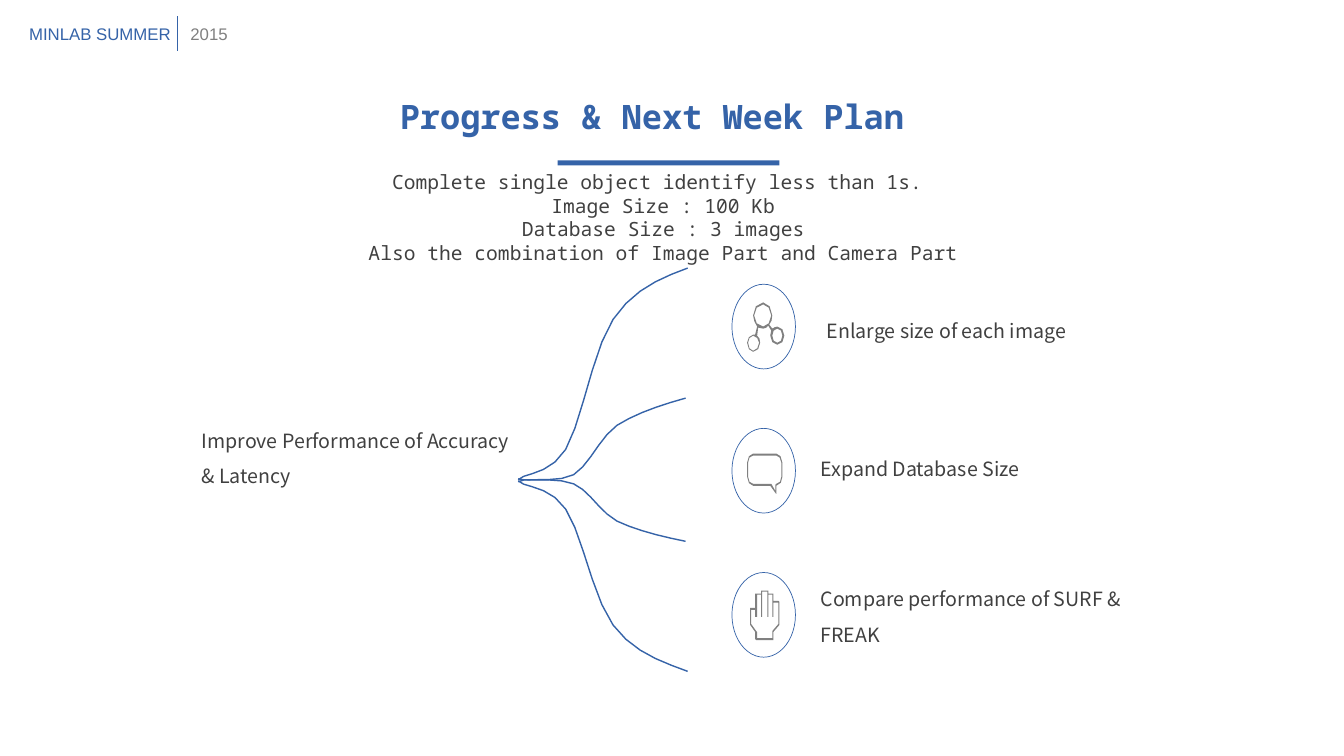
from dataclasses import dataclass

from lxml import etree
from pptx import Presentation
from pptx import util as u
from pptx.dml.color import RGBColor
from pptx.enum import shapes, text
from pptx.oxml.ns import qn


@dataclass(frozen=True)
class Theme:
    blue: str = "3563A8"
    dark: str = "404040"
    gray: str = "808080"
    mono: str = "Noto Sans Mono"
    sans: str = "Noto Sans CJK SC"
    plain: str = "Arial"
    title: int = 24
    body: int = 14
    small: int = 12


THEME = Theme()
CENTER = text.PP_ALIGN.CENTER
LEFT = text.PP_ALIGN.LEFT

TITLE = "Progress & Next Week Plan"
PROGRESS = [
    "Complete single object identify less than 1s. ",
    "Image Size : 100 Kb",
    "Database Size : 3 images",
    "Also the combination of Image Part and Camera Part",
]
PLANS = [
    ("Improve Performance of Accuracy & Latency", (1.9, 4.09, 3.38, 0.81)),
    ("Enlarge size of each image", (8.1, 3, 3.38, 0.45)),
    ("Expand Database Size", (8.04, 4.37, 3.38, 0.45)),
    ("Compare performance of SURF & FREAK", (8.04, 5.66, 3.38, 0.81)),
]
HEADER = [
    ("MINLAB SUMMER", (0.19, 0.19, 1.64, 0.3), THEME.blue),
    ("2015", (1.79, 0.19, 0.57, 0.3), THEME.gray),
]

BRANCHES = [
    [(6.82, 2.66), (6.55, 2.76, 6.28, 2.87, 6.08, 3.17),
     (5.88, 3.47, 5.77, 4.19, 5.61, 4.46), (5.45, 4.72, 5.19, 4.69, 5.14, 4.76)],
    [(6.82, 6.66), (6.55, 6.56, 6.28, 6.47, 6.08, 6.2),
     (5.88, 5.93, 5.77, 5.28, 5.61, 5.05), (5.45, 4.81, 5.19, 4.84, 5.14, 4.77)],
    [(6.8, 3.95), (6.55, 4.02, 6.31, 4.1, 6.12, 4.22),
     (5.94, 4.35, 5.85, 4.61, 5.69, 4.71), (5.52, 4.8, 5.18, 4.73, 5.14, 4.78)],
    [(6.8, 5.37), (6.55, 5.32, 6.31, 5.26, 6.12, 5.17),
     (5.94, 5.07, 5.85, 4.87, 5.69, 4.8), (5.52, 4.73, 5.18, 4.78, 5.14, 4.75)],
]

MOLECULE = [
    [(7.71, 3.24), (7.69, 3.24, 7.68, 3.25, 7.66, 3.26), (7.63, 3.22),
     (7.65, 3.2, 7.66, 3.17, 7.66, 3.13), (7.66, 3.06, 7.62, 3, 7.57, 3),
     (7.51, 3, 7.47, 3.06, 7.47, 3.13), (7.47, 3.17, 7.49, 3.21, 7.51, 3.24),
     (7.49, 3.32), (7.47, 3.32), (7.44, 3.32, 7.41, 3.36, 7.41, 3.4),
     (7.41, 3.45, 7.44, 3.49, 7.47, 3.49), (7.51, 3.49, 7.54, 3.45, 7.54, 3.4),
     (7.54, 3.37, 7.53, 3.34, 7.51, 3.33), (7.52, 3.25),
     (7.54, 3.25, 7.55, 3.26, 7.57, 3.26), (7.59, 3.26, 7.61, 3.25, 7.62, 3.23),
     (7.65, 3.28), (7.65, 3.29, 7.64, 3.31, 7.64, 3.33),
     (7.64, 3.38, 7.67, 3.42, 7.71, 3.42), (7.75, 3.42, 7.78, 3.38, 7.78, 3.33),
     (7.78, 3.28, 7.75, 3.24, 7.71, 3.24)],
    [(7.53, 3.4), (7.53, 3.44, 7.5, 3.48, 7.47, 3.48), (7.44, 3.48, 7.42, 3.44, 7.42, 3.4),
     (7.42, 3.37, 7.44, 3.33, 7.47, 3.33), (7.5, 3.33, 7.53, 3.37, 7.53, 3.4)],
    [(7.48, 3.13), (7.48, 3.07, 7.52, 3.02, 7.57, 3.02), (7.61, 3.02, 7.65, 3.07, 7.65, 3.13),
     (7.65, 3.19, 7.61, 3.24, 7.57, 3.24), (7.52, 3.24, 7.48, 3.19, 7.48, 3.13)],
    [(7.71, 3.4), (7.68, 3.4, 7.66, 3.37, 7.66, 3.33), (7.66, 3.29, 7.68, 3.26, 7.71, 3.26),
     (7.74, 3.26, 7.76, 3.29, 7.76, 3.33), (7.76, 3.37, 7.74, 3.4, 7.71, 3.4)],
]
SPEECH = [
    [(7.7, 4.9), (7.69, 4.89), (7.64, 4.82), (7.47, 4.82),
     (7.44, 4.82, 7.41, 4.78, 7.41, 4.73), (7.41, 4.59), (7.41, 4.54, 7.44, 4.5, 7.47, 4.5),
     (7.7, 4.5), (7.73, 4.5, 7.76, 4.54, 7.76, 4.59), (7.76, 4.73),
     (7.76, 4.78, 7.74, 4.81, 7.7, 4.82), (7.7, 4.89)],
    [(7.47, 4.52), (7.44, 4.52, 7.42, 4.55, 7.42, 4.59), (7.42, 4.73),
     (7.42, 4.77, 7.44, 4.8, 7.47, 4.8), (7.64, 4.8), (7.65, 4.8), (7.69, 4.87),
     (7.69, 4.81), (7.7, 4.8), (7.73, 4.8, 7.75, 4.77, 7.75, 4.73), (7.75, 4.59),
     (7.75, 4.55, 7.72, 4.52, 7.7, 4.52)],
]
HAND = [
    [(7.72, 5.96), (7.67, 5.96), (7.67, 5.89), (7.62, 5.89), (7.62, 5.86), (7.55, 5.86),
     (7.55, 5.89), (7.49, 5.89), (7.49, 6.03), (7.44, 6.03), (7.44, 6.2), (7.49, 6.27),
     (7.49, 6.34), (7.5, 6.35), (7.67, 6.35), (7.67, 6.27), (7.73, 6.2), (7.73, 5.97)],
    [(7.72, 6.19), (7.66, 6.26), (7.66, 6.33), (7.51, 6.33), (7.51, 6.27), (7.5, 6.26),
     (7.45, 6.19), (7.45, 6.05), (7.49, 6.05), (7.49, 6.12), (7.51, 6.12), (7.51, 5.9),
     (7.55, 5.9), (7.55, 6.12), (7.56, 6.12), (7.56, 5.87), (7.61, 5.87), (7.61, 6.12),
     (7.62, 6.12), (7.62, 5.9), (7.66, 5.9), (7.66, 6.12), (7.67, 6.12), (7.67, 5.98),
     (7.72, 5.98)],
]
ICONS = [MOLECULE, SPEECH, HAND]
RING_TOP, RING_PITCH = 2.82, 1.43
ICON_PARTS, BRANCH_PARTS = 2, 5


def inches(values):
    return [u.Inches(value) for value in values]


def assign(target, values):
    for name, value in values.items():
        setattr(target, name, value)


def write(box, lines, font, size, color, bold=False, align=LEFT, spacing=None, wrap=True):
    frame = box.text_frame
    assign(frame, {"word_wrap": wrap, "auto_size": text.MSO_AUTO_SIZE.NONE,
                   "vertical_anchor": text.MSO_ANCHOR.TOP})
    for index, line in enumerate(lines):
        para = frame.add_paragraph() if index else frame.paragraphs[0]
        assign(para, {"alignment": align, "line_spacing": spacing})
        span = para.add_run()
        span.text = line
        assign(span.font, {"name": font, "size": u.Pt(size), "bold": bold})
        span.font.color.rgb = RGBColor.from_string(color)


def paint(shape, fill=None, line=None, width=1):
    shape.shadow.inherit = False
    for target, color in ((shape.fill, fill), (shape.line.fill, line)):
        if color:
            target.solid()
            target.fore_color.rgb = RGBColor.from_string(color)
        else:
            target.background()
    if line:
        shape.line.width = u.Pt(width)


def flatten(steps, parts):
    points = [steps[0]]
    for step in steps[1:]:
        if len(step) == 2:
            points.append(step)
            continue
        start, first, second, end = points[-1], step[:2], step[2:4], step[4:]
        for part in range(1, parts + 1):
            t = part / parts
            weights = ((1 - t) ** 3, 3 * t * (1 - t) ** 2, 3 * t * t * (1 - t), t ** 3)
            points.append(tuple(
                sum(weight * value for weight, value in zip(weights, axis))
                for axis in zip(start, first, second, end)))
    return [inches(point) for point in points]


def draw_outline(canvas, contours, parts, close):
    outlines = [flatten(contour, parts) for contour in contours]
    builder = canvas.build_freeform(*outlines[0][0], scale=1.0)
    for index, points in enumerate(outlines):
        if index:
            builder.move_to(*points[0])
        builder.add_line_segments(points[1:], close=close)
    return builder.convert_to_shape()


def main():
    deck = Presentation()
    deck.slide_width, deck.slide_height = inches((13.33, 7.5))
    page = deck.slides.add_slide(deck.slide_layouts[5])

    title = page.shapes.title
    assign(title, dict(zip(("left", "top", "width", "height"), inches((3.35, 0.9, 6.23, 0.5)))))
    write(title, [TITLE], THEME.mono, THEME.title, THEME.blue, bold=True, align=CENTER)
    rule = page.shapes.add_shape(shapes.MSO_SHAPE.RECTANGLE, *inches((5.53, 1.59, 2.2, 0.05)))
    paint(rule, fill=THEME.blue)
    progress = page.shapes.add_textbox(*inches((3.25, 1.64, 6.66, 1.04)))
    write(progress, PROGRESS, THEME.mono, THEME.body, THEME.dark, align=CENTER)

    for index, icon in enumerate(ICONS):
        place = inches((7.26, RING_TOP + index * RING_PITCH, 0.63, 0.84))
        paint(page.shapes.add_shape(shapes.MSO_SHAPE.OVAL, *place), line=THEME.blue, width=0.5)
        paint(draw_outline(page.shapes, icon, ICON_PARTS, True), fill=THEME.gray)
    fan = page.shapes.add_group_shape().shapes
    for branch in BRANCHES:
        paint(draw_outline(fan, [branch], BRANCH_PARTS, False), line=THEME.blue)
    for words, place in PLANS:
        box = page.shapes.add_textbox(*inches(place))
        write(box, [words], THEME.sans, THEME.body, THEME.dark, spacing=1.5)

    header = page.shapes.add_group_shape().shapes
    divider = header.add_connector(
        shapes.MSO_CONNECTOR.STRAIGHT, *inches((1.76, 0.16, 1.76, 0.51)))
    divider.line.color.rgb = RGBColor.from_string(THEME.blue)
    divider.line.width = u.Pt(0.5)
    etree.SubElement(divider._element.spPr, qn("a:effectLst"))
    for words, place, color in HEADER:
        box = header.add_textbox(*inches(place))
        write(box, [words], THEME.plain, THEME.small, color, wrap=False)

    deck.save("out.pptx")


if __name__ == "__main__":
    main()
